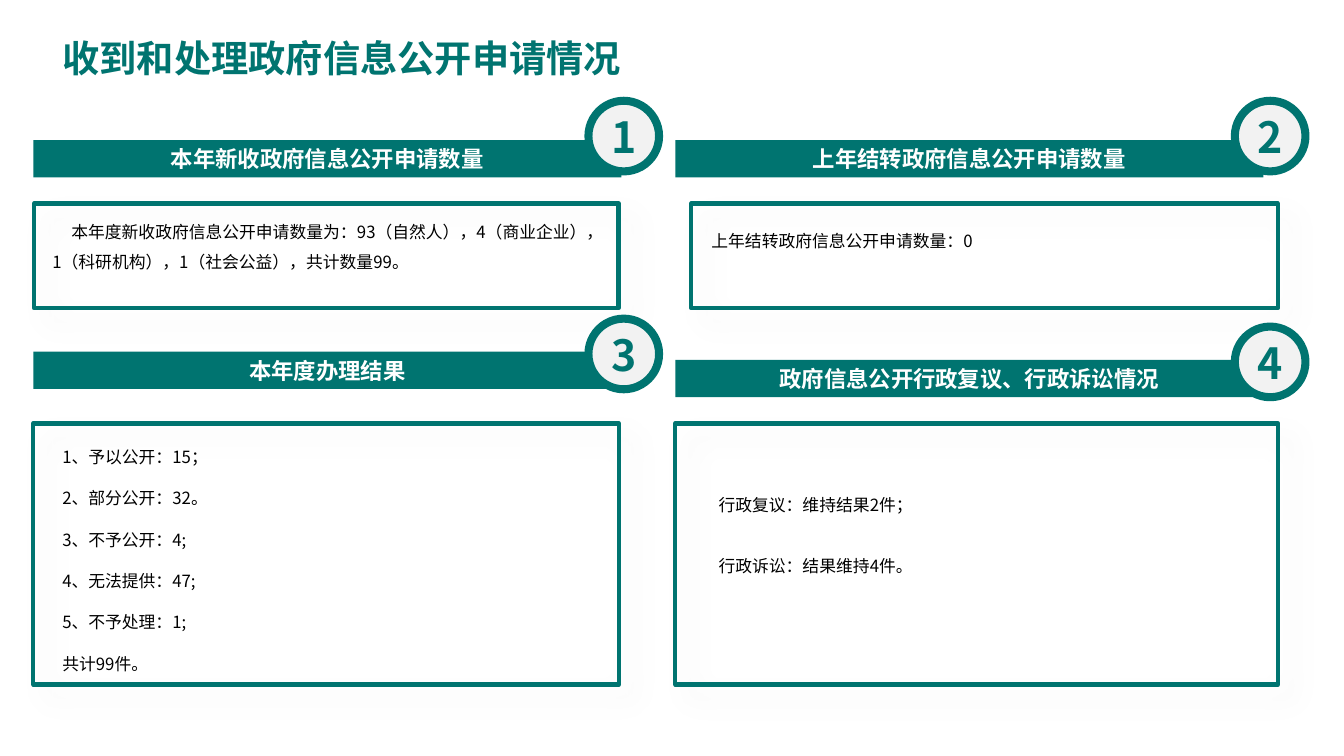
import pptx
import pptx.util
import pptx.dml.color
import pptx.enum.shapes
import pptx.enum.text
import pptx.oxml
import pptx.oxml.ns

Cm, Pt = pptx.util.Cm, pptx.util.Pt
RGB = pptx.dml.color.RGBColor.from_string
SHAPE = pptx.enum.shapes.MSO_SHAPE
ALIGN = pptx.enum.text.PP_ALIGN
ANCHOR = pptx.enum.text.MSO_ANCHOR

FONT = "Noto Sans CJK SC"
COLORS = {"teal": "007470", "pale": "F2F2F2", "white": "FFFFFF", "black": "000000"}
SHADOW = (
    f'<a:outerShdw {pptx.oxml.ns.nsdecls("a")} blurRad="{Pt(19)}" dist="{Pt(14)}" '
    'dir="2700000" algn="tl" rotWithShape="0"><a:srgbClr val="000000">'
    '<a:alpha val="5000"/></a:srgbClr></a:outerShdw>'
)


def write(p, text, size, color, bold=False, align=ALIGN.LEFT):
    p.text = text
    p.alignment = align
    p.font.size = Pt(size)
    p.font.bold = bold
    p.font.name = FONT
    p.font.color.rgb = RGB(COLORS[color])
    # Chinese glyphs take their font from a:ea
    ea = pptx.oxml.parse_xml(f'<a:ea {pptx.oxml.ns.nsdecls("a")} typeface="{FONT}"/>')
    p.font._element.find(pptx.oxml.ns.qn("a:latin")).addnext(ea)


def add_shape(kind, box, fill=None, line=None):
    """Add a shape without shadow; box is left, top, width, height in cm."""
    sp = s.shapes.add_shape(kind, *map(Cm, box))
    sp.shadow.inherit = False
    if fill:
        sp.fill.solid()
        sp.fill.fore_color.rgb = RGB(COLORS[fill])
    else:
        sp.fill.background()
    if line:
        sp.line.color.rgb = RGB(COLORS["teal"])
        sp.line.width = Pt(line)
    else:
        sp.line.fill.background()
    return sp


prs = pptx.Presentation()
prs.slide_width, prs.slide_height = Cm(33.87), Cm(19.05)
s = prs.slides.add_slide(prs.slide_layouts[5])

title = s.shapes.title
title.left, title.top, title.width, title.height = map(Cm, (1.32, 0.76, 14.63, 1.4))
tf = title.text_frame
tf.word_wrap = False
tf.auto_size = pptx.enum.text.MSO_AUTO_SIZE.NONE
tf.vertical_anchor = ANCHOR.MIDDLE
write(tf.paragraphs[0], "收到和处理政府信息公开申请情况", 26.6, "teal", True)

# heading, banner left and top, badge left and top, frame, text box,
# first-line indent (cm), space before (pt), lines
panels = [
    ("本年新收政府信息公开申请数量", (0.84, 3.53), (14.83, 2.54),
     (0.86, 5.13, 14.73, 2.64), (1.07, 5.21, 14.48, 2.57), 0.48, 0,
     ["本年度新收政府信息公开申请数量为：93（自然人），4（商业企业），"
      "1（科研机构），1（社会公益），共计数量99。"]),
    ("上年结转政府信息公开申请数量", (17.02, 3.53), (31.12, 2.54),
     (17.42, 5.13, 14.78, 2.64), (17.68, 5.44, 14, 1.02), 0, 0,
     ["上年结转政府信息公开申请数量：0"]),
    ("本年度办理结果", (0.84, 8.86), (14.83, 8.03),
     (0.84, 10.67, 14.76, 6.58), (1.32, 10.87, 12.65, 7.6), 0, 8,
     ["1、予以公开：15；", "2、部分公开：32。", "3、不予公开：4;",
      "4、无法提供：47;", "5、不予处理：1;", "共计99件。"]),
    ("政府信息公开行政复议、行政诉讼情况", (17.02, 9.07), (31.12, 8.23),
     (17.02, 10.67, 15.19, 6.58), (17.86, 12.1, 14, 2.6), 0, 21.8,
     ["行政复议：维持结果2件；", "行政诉讼：结果维持4件。"]),
]

for number, panel in enumerate(panels, 1):
    heading, banner_at, badge_at, frame_box, text_box, indent, gap, lines = panel

    frame = add_shape(SHAPE.RECTANGLE, frame_box, line=3)
    effects = frame._element.spPr.find(pptx.oxml.ns.qn("a:effectLst"))
    effects.append(pptx.oxml.parse_xml(SHADOW))

    tf = s.shapes.add_textbox(*map(Cm, text_box)).text_frame
    tf.word_wrap = True
    for i, line in enumerate(lines):
        p = tf.add_paragraph() if i else tf.paragraphs[0]
        write(p, line, 12, "black")
        p.line_spacing = 1.5
        p.space_before = Pt(gap)
        if indent:
            p._p.get_or_add_pPr().set("indent", str(Cm(indent)))

    banner = add_shape(SHAPE.RECTANGLE, (*banner_at, 14.82, 0.94), "teal")
    badge = add_shape(SHAPE.OVAL, (*badge_at, 1.78, 1.78), "pale", 5.75)
    for sp, text, size, color in ((banner, heading, 16, "white"),
                                  (badge, str(number), 30.6, "teal")):
        tf = sp.text_frame
        tf.margin_left = tf.margin_right = tf.margin_top = tf.margin_bottom = 0
        tf.vertical_anchor = ANCHOR.MIDDLE
        write(tf.paragraphs[0], text, size, color, True, ALIGN.CENTER)

prs.save("out.pptx")
